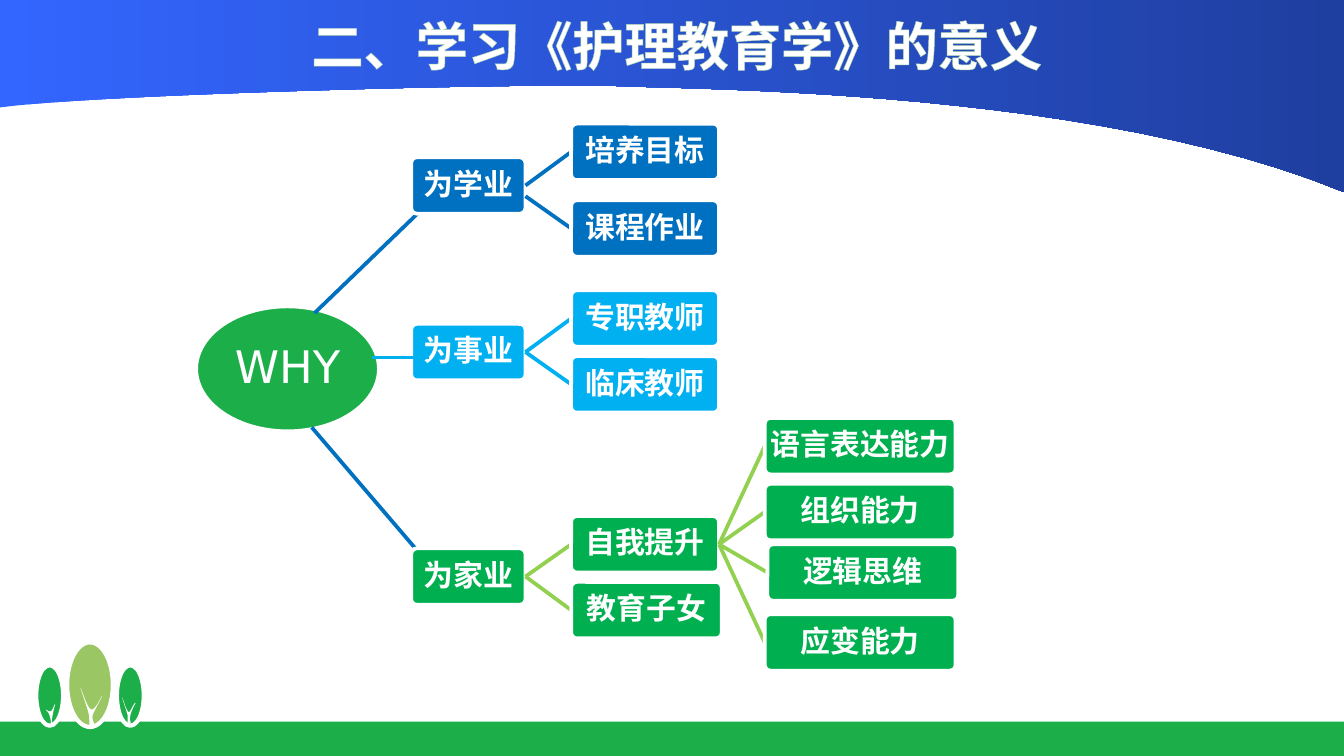
from dataclasses import dataclass

from lxml.etree import SubElement
from pptx import Presentation
from pptx.dml.color import RGBColor
from pptx.enum.shapes import MSO_CONNECTOR, MSO_SHAPE
from pptx.enum.text import MSO_ANCHOR, PP_ALIGN
from pptx.oxml import parse_xml
from pptx.oxml.ns import nsdecls, qn
from pptx.util import Inches, Pt


@dataclass(frozen=True)
class Theme:
    white: str = "FFFFFF"
    banner_start: str = "3366FF"
    banner_end: str = "1F3FA0"
    grass: str = "1CAE49"
    leaf: str = "9AC763"
    title_edge: str = "ABD3B1"
    study: str = "0070C0"
    career: str = "00B0F0"
    family: str = "00B050"
    family_line: str = "92D050"
    title_size: int = 28
    root_size: int = 24
    node_size: int = 16
    cjk_font: str = "Noto Sans CJK SC"
    latin_font: str = "DejaVu Sans"


THEME = Theme()
BOX_HEIGHT = 0.42
COLUMNS = [(3.06, 0.85), (4.25, 1.1), (5.69, 1.42)]  # left, width


@dataclass(frozen=True)
class Topic:
    label: str
    top: float
    children: tuple = ()
    shift: float = 0  # offset from the column's left edge
    widen: float = 0
    link_drop: float = 0  # offset of the link's start below the parent's middle


STUDY = Topic("为学业", 1.17, (Topic("培养目标", 0.92),
                            Topic("课程作业", 1.49, link_drop=0.08)))
CAREER = Topic("为事业", 2.41, (Topic("专职教师", 2.16), Topic("临床教师", 2.65)))
FAMILY = Topic("为家业", 4.08, (
    Topic("自我提升", 3.84, (
        Topic("语言表达能力", 3.11),
        Topic("组织能力", 3.6),
        Topic("逻辑思维", 4.05, shift=0.02),
        Topic("应变能力", 4.57),
    )),
    Topic("教育子女", 4.33, widen=0.02),
))

# Each curve: start point, then cubic segments as control, control, end.
BANNER_CURVE = [(0, 0.8), (0.73, 0.7), (3.86, 0.62), (4.57, 0.64),
                (5.29, 0.67), (8.16, 0.67), (10, 1.43)]
TRUNKS = [
    [(0.6, 5.12), (0.6, 5.13), (0.65, 5.26), (0.66, 5.31), (0.67, 5.35), (0.66, 5.4),
     (0.67, 5.42), (0.68, 5.43), (0.7, 5.42), (0.71, 5.41), (0.71, 5.39), (0.68, 5.36),
     (0.69, 5.32), (0.7, 5.29), (0.76, 5.19), (0.76, 5.18), (0.76, 5.17), (0.71, 5.29),
     (0.68, 5.28), (0.65, 5.27), (0.62, 5.16), (0.6, 5.12)],
    [(0.91, 5.19), (0.91, 5.2), (0.94, 5.28), (0.95, 5.32), (0.95, 5.35), (0.95, 5.38),
     (0.95, 5.39), (0.96, 5.4), (0.97, 5.4), (0.97, 5.39), (0.98, 5.38), (0.96, 5.35),
     (0.97, 5.33), (0.97, 5.3), (1.01, 5.23), (1.01, 5.23), (1, 5.22), (0.97, 5.3),
     (0.96, 5.3), (0.94, 5.29), (0.92, 5.21), (0.91, 5.19)],
    [(0.34, 5.28), (0.34, 5.28), (0.37, 5.31), (0.37, 5.33), (0.38, 5.35), (0.38, 5.39),
     (0.38, 5.4), (0.38, 5.41), (0.39, 5.41), (0.39, 5.4), (0.39, 5.39), (0.38, 5.36),
     (0.39, 5.34), (0.39, 5.31), (0.41, 5.25), (0.41, 5.24), (0.41, 5.23), (0.39, 5.29),
     (0.38, 5.29), (0.36, 5.3), (0.35, 5.28), (0.34, 5.28)],
]


def rgb(value):
    return RGBColor.from_string(value)


def set_all(target, values):
    for name, value in values.items():
        setattr(target, name, value)


def paint(shape, fill, edge_width=0):
    shape.shadow.inherit = False
    shape.fill.solid()
    shape.fill.fore_color.rgb = rgb(fill)
    if edge_width:
        shape.line.color.rgb = rgb(THEME.white)
        shape.line.width = Pt(edge_width)
    else:
        shape.line.fill.background()


def add_preset(slide, preset, bounds, fill, edge_width=0):
    shape = slide.shapes.add_shape(preset, *map(Inches, bounds))
    paint(shape, fill, edge_width)
    return shape


def trace(curve, steps=24):
    """Points along a chain of cubic Bézier segments."""
    points = [curve[0]]
    for i in range(0, len(curve) - 1, 3):
        for step in range(1, steps + 1):
            t = step / steps
            weights = ((1 - t) ** 3, 3 * t * (1 - t) ** 2, 3 * t * t * (1 - t), t ** 3)
            points.append(tuple(sum(w * point[axis] for w, point in zip(weights, curve[i:i + 4]))
                                for axis in (0, 1)))
    return points


def add_outline(slide, points, fill):
    start, *rest = [(Inches(x), Inches(y)) for x, y in points]
    builder = slide.shapes.build_freeform(*start)
    builder.add_line_segments(rest, close=True)
    outline = builder.convert_to_shape()
    paint(outline, fill)
    return outline


def write_label(shape, label, size, font_name, bold, insets):
    frame = shape.text_frame
    frame.text = label
    side, end = map(Inches, insets)
    set_all(frame, {"word_wrap": True, "vertical_anchor": MSO_ANCHOR.MIDDLE,
                    "margin_left": side, "margin_right": side,
                    "margin_top": end, "margin_bottom": end})
    paragraph = frame.paragraphs[0]
    set_all(paragraph, {"alignment": PP_ALIGN.CENTER, "line_spacing": 0.9,
                        "space_after": Pt(0.35 * size)})
    run = paragraph.runs[0]
    set_all(run.font, {"size": Pt(size), "bold": bold, "name": font_name})
    run.font.color.rgb = rgb(THEME.white)
    SubElement(run.font._element, qn("a:ea"), typeface=font_name)
    return run


def add_link(slide, start, end, color):
    link = slide.shapes.add_connector(MSO_CONNECTOR.STRAIGHT, *map(Inches, (*start, *end)))
    link.line.color.rgb = rgb(color)
    link.line.width = Pt(2)
    SubElement(link._element.spPr, qn("a:effectLst"))


def add_topic(slide, topic, fill, link_color, level=0):
    """Draws a topic box, then the links and boxes of its children."""
    column_left, column_width = COLUMNS[level]
    left, width = column_left + topic.shift, column_width + topic.widen
    box = add_preset(slide, MSO_SHAPE.ROUNDED_RECTANGLE,
                     (left, topic.top, width, BOX_HEIGHT), fill, 2)
    box.adjustments[0] = 0.1
    write_label(box, topic.label, THEME.node_size, THEME.cjk_font, True, (0.02, 0.02))
    middle = topic.top + BOX_HEIGHT / 2
    for child in topic.children:
        add_link(slide, (left + width, middle + child.link_drop),
                 (COLUMNS[level + 1][0] + child.shift, child.top + BOX_HEIGHT / 2), link_color)
        add_topic(slide, child, fill, link_color, level + 1)


def add_scenery(slide):
    banner = add_outline(slide, [(0, 0), *trace(BANNER_CURVE), (10, 0)], THEME.banner_start)
    banner.fill.gradient()
    banner.fill.gradient_angle = 0
    for stop, color, position in zip(banner.fill.gradient_stops,
                                     (THEME.banner_start, THEME.banner_end), (0, 1)):
        stop.color.rgb = rgb(color)
        stop.position = position
    add_preset(slide, MSO_SHAPE.RECTANGLE, (0, 5.37, 10, 0.27), THEME.grass)
    for bounds, color in (((0.27, 4.95, 0.2, 0.45), THEME.grass),
                          ((0.5, 4.78, 0.34, 0.63), THEME.leaf),
                          ((0.87, 4.95, 0.2, 0.45), THEME.grass)):
        add_preset(slide, MSO_SHAPE.OVAL, bounds, color, 2.25)
    for trunk in TRUNKS:
        add_outline(slide, trace(trunk, 8), THEME.white)


def add_title(slide, text):
    title = slide.shapes.title
    set_all(title, {"left": Inches(2.17), "top": Inches(0.05),
                    "width": Inches(5.73), "height": Inches(0.57)})
    run = write_label(title, text, THEME.title_size, THEME.cjk_font, True, (0.1, 0.05))
    title.text_frame.vertical_anchor = MSO_ANCHOR.TOP
    set_all(title.text_frame.paragraphs[0], {"line_spacing": 1.0, "space_after": Pt(0)})
    run.font._element.insert(0, parse_xml(
        f'<a:ln {nsdecls("a")} w="{Pt(0.8)}"><a:solidFill>'
        f'<a:srgbClr val="{THEME.title_edge}"/></a:solidFill></a:ln>'))
    title.element.getparent().append(title.element)  # in front of the banner


def main():
    deck = Presentation()
    width = Inches(10)
    set_all(deck, {"slide_width": width, "slide_height": width * 9 // 16})
    slide = deck.slides.add_slide(deck.slide_layouts[5])
    add_scenery(slide)
    add_title(slide, "二、学习《护理教育学》的意义")

    root = add_preset(slide, MSO_SHAPE.OVAL, (1.46, 2.28, 1.36, 0.93), THEME.grass, 2)
    write_label(root, "WHY", THEME.root_size, THEME.latin_font, False, (0.02, 0.02))
    add_link(slide, (2.34, 2.33), (3.21, 1.49), THEME.study)
    add_link(slide, (2.32, 3.18), (3.27, 4.29), THEME.study)
    add_topic(slide, STUDY, THEME.study, THEME.study)
    add_topic(slide, CAREER, THEME.career, THEME.career)
    add_topic(slide, FAMILY, THEME.family, THEME.family_line)
    add_link(slide, (2.77, 2.66), (3.19, 2.66), THEME.career)
    deck.save("out.pptx")


if __name__ == "__main__":
    main()
